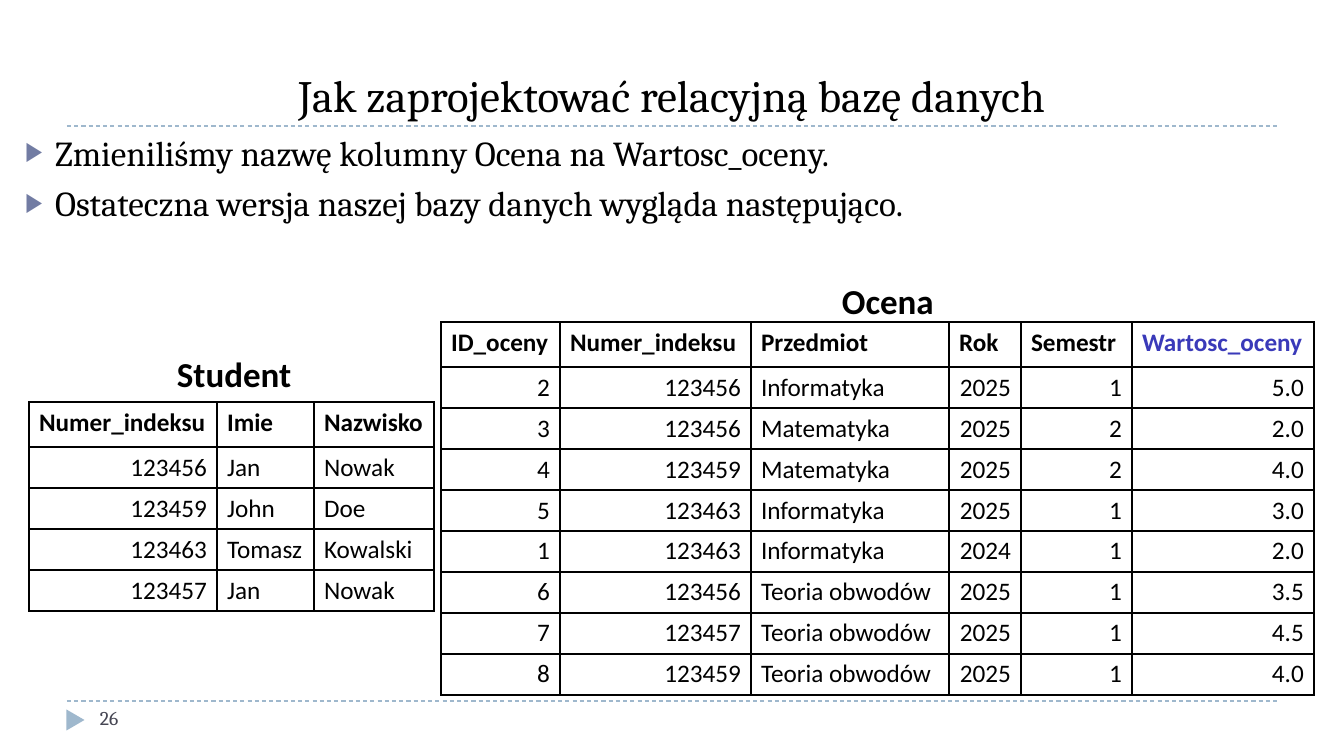
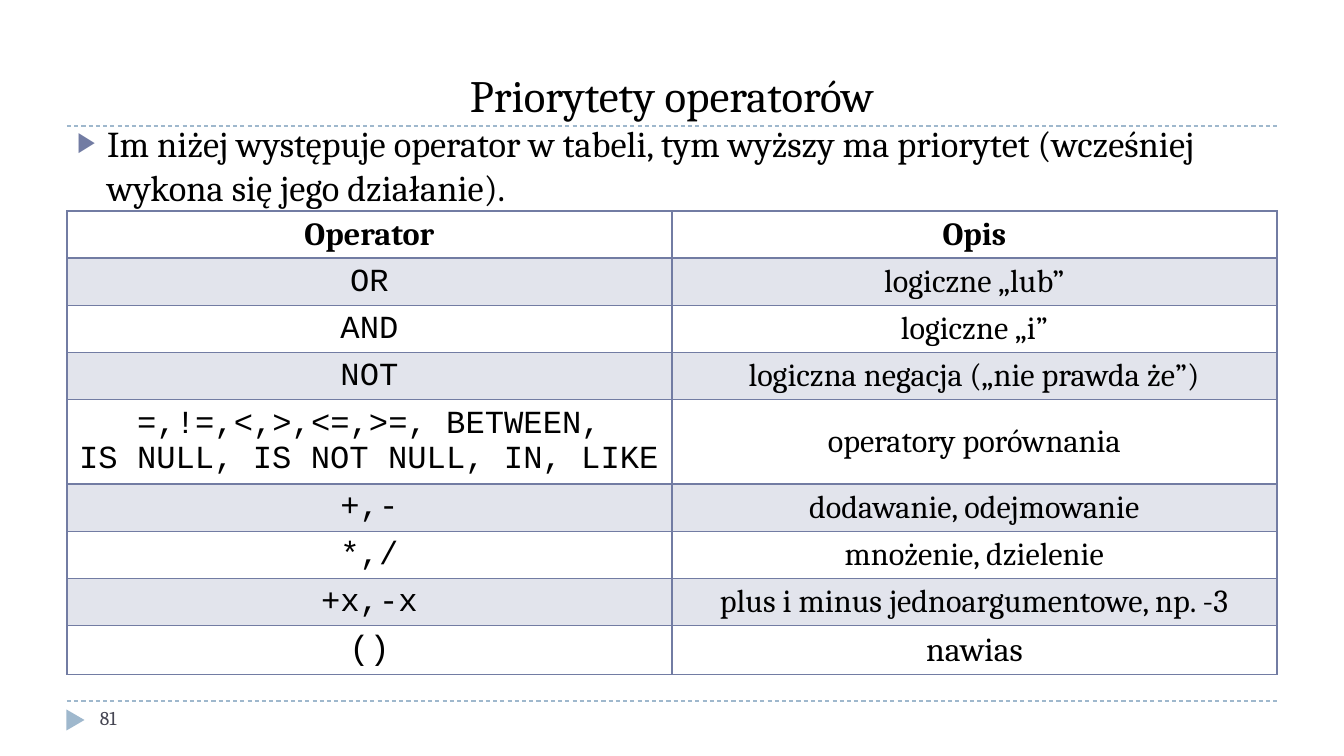
from dataclasses import dataclass

from lxml import etree
from pptx import Presentation
from pptx.dml.color import RGBColor
from pptx.enum.dml import MSO_LINE
from pptx.enum.shapes import MSO_CONNECTOR, MSO_SHAPE
from pptx.enum.text import MSO_ANCHOR, MSO_AUTO_SIZE, PP_ALIGN
from pptx.oxml.ns import qn
from pptx.util import Emu, Pt

WIDE, HIGH = 1344, 756
SCALE = 12192000 / WIDE

BLACK = RGBColor(0x00, 0x00, 0x00)
SKY = RGBColor(0x9F, 0xB8, 0xCD)
SLATE = RGBColor(0x72, 0x7C, 0xA3)
GREY = RGBColor(0x46, 0x46, 0x53)
BLUE = RGBColor(0x3A, 0x3A, 0xB9)

SERIF, SANS, MONO = "Cambria", "Calibri", "Courier New"

LEFT, CENTER, RIGHT = PP_ALIGN.LEFT, PP_ALIGN.CENTER, PP_ALIGN.RIGHT
TOP, MIDDLE, BOTTOM = MSO_ANCHOR.TOP, MSO_ANCHOR.MIDDLE, MSO_ANCHOR.BOTTOM
FIXED = MSO_AUTO_SIZE.NONE
STRAIGHT = MSO_CONNECTOR.STRAIGHT
WEDGE = MSO_SHAPE.ISOSCELES_TRIANGLE
DASH = MSO_LINE.DASH

EDGE, SPAN = 67, 1210
RULES = (126, 701)


@dataclass(frozen=True)
class Box:
    x: int
    y: int
    w: int
    h: int


@dataclass(frozen=True)
class Face:
    name: str
    size: int
    color: RGBColor = BLACK
    bold: bool = False


@dataclass(frozen=True)
class Grid:
    x: int
    y: int
    cols: tuple
    rows: tuple
    cells: tuple
    aligns: tuple
    head: Face
    faces: tuple
    line: RGBColor = BLACK
    rule: int = 1
    anchor: MSO_ANCHOR = TOP
    striped: bool = False
    pitch: float = 1.0


@dataclass(frozen=True)
class Label:
    text: str
    x: int
    y: int


def px(n: float) -> Emu:
    return Emu(round(n * SCALE))


def place(shape, box: Box) -> None:
    shape.left, shape.top = px(box.x), px(box.y)
    shape.width, shape.height = px(box.w), px(box.h)


def style(para, face: Face, align=LEFT) -> None:
    para.alignment = align
    font = para.font
    font.name, font.size, font.bold = face.name, Pt(face.size), face.bold
    font.color.rgb = face.color


def add_text(slide, box: Box, text: str, face: Face) -> None:
    area = slide.shapes.add_textbox(*map(px, (box.x, box.y, box.w, box.h)))
    frame = area.text_frame
    frame.word_wrap = True
    frame.text = text
    style(frame.paragraphs[0], face)


def add_bullet(para) -> None:
    props = para._p.get_or_add_pPr()
    props.set("marL", str(px(30)))
    props.set("indent", str(-px(30)))
    tint = etree.SubElement(props, qn("a:buClr"))
    etree.SubElement(tint, qn("a:srgbClr"), val=str(SLATE))
    etree.SubElement(props, qn("a:buSzPct"), val="76000")
    etree.SubElement(props, qn("a:buFont"), typeface=SERIF)
    etree.SubElement(props, qn("a:buChar"), char="▶")


def add_frame(slide, title: str, number: int) -> None:
    """Draw the title, dashed rules, marker and page number."""
    head = slide.shapes.title
    place(head, Box(EDGE, 18, SPAN, 109))
    frame = head.text_frame
    frame.text = title
    frame.vertical_anchor = BOTTOM
    frame.auto_size = FIXED
    style(frame.paragraphs[0], Face(SERIF, 32), CENTER)
    for y in RULES:
        rule = slide.shapes.add_connector(
            STRAIGHT, px(EDGE), px(y), px(EDGE + SPAN), px(y))
        rule.line.color.rgb = SKY
        rule.line.width = Pt(0.75)
        rule.line.dash_style = DASH
        etree.SubElement(rule._element.spPr, qn("a:effectLst"))
    mark = slide.shapes.add_shape(WEDGE, px(65), px(711), px(21), px(18))
    mark.rotation = 90
    mark.shadow.inherit = False
    mark.fill.solid()
    mark.fill.fore_color.rgb = SKY
    mark.line.fill.background()
    add_text(slide, Box(90, 701, 291, 40), str(number), Face(SERIF, 14, GREY))


def fill_body(slide, box: Box, lines: tuple, size: int) -> None:
    body = slide.placeholders[1]
    place(body, box)
    frame = body.text_frame
    frame.text = "\n".join(lines)
    frame.auto_size = FIXED
    frame.vertical_anchor = TOP
    for i, para in enumerate(frame.paragraphs):
        add_bullet(para)
        para.space_before = Pt(6 if i else 0)
        para.line_spacing = 1.0
        style(para, Face(SERIF, size))


def set_edges(cell, color: RGBColor, widths: dict) -> None:
    props = cell._tc.get_or_add_tcPr()
    for i, (side, width) in enumerate(widths.items()):
        edge = etree.Element(qn(f"a:ln{side}"), w=str(Pt(width)))
        paint = etree.SubElement(edge, qn("a:solidFill"))
        etree.SubElement(paint, qn("a:srgbClr"), val=str(color))
        props.insert(i, edge)


def set_fill(cell, shaded: bool) -> None:
    if not shaded:
        cell.fill.background()
        return
    cell.fill.solid()
    cell.fill.fore_color.rgb = SLATE
    tint = cell._tc.tcPr.find(f".//{qn('a:srgbClr')}")
    etree.SubElement(tint, qn("a:alpha"), val="20000")


def add_grid(slide, grid: Grid) -> None:
    table = slide.shapes.add_table(
        len(grid.rows), len(grid.cols), px(grid.x), px(grid.y),
        px(sum(grid.cols)), px(sum(grid.rows))).table
    table.first_row = table.horz_banding = False
    for col, width in zip(table.columns, grid.cols):
        col.width = px(width)
    for r, (row, height) in enumerate(zip(table.rows, grid.rows)):
        row.height = px(height)
        for c, text in enumerate(grid.cells[r]):
            cell = table.cell(r, c)
            cell.text = text
            cell.vertical_anchor = grid.anchor
            face = grid.faces[c] if r else grid.head
            if text == "Wartosc_oceny":
                face = Face(face.name, face.size, BLUE, True)
            elif text in ("()", "nawias"):
                face = Face(face.name, 24)
            align = grid.aligns[c]
            if r == 0 and align == RIGHT:
                align = LEFT
            para = cell.text_frame.paragraphs[0]
            para.line_spacing = grid.pitch
            style(para, face, align)
            set_fill(cell, grid.striped and r % 2 == 1)
            set_edges(cell, grid.line, {
                "L": 1, "R": 1,
                "T": grid.rule if r == 1 else 1,
                "B": grid.rule if r == 0 else 1})


def add_data(slide, x: int, y: int, cols: tuple, aligns: tuple,
             cells: tuple) -> None:
    """Add a database table in the plain black style."""
    rows = (45,) + (41,) * (len(cells) - 1)
    add_grid(slide, Grid(x, y, cols, rows, cells, aligns,
                         Face(SANS, 18, bold=True),
                         (Face(SANS, 18),) * len(cols)))


GRADES = (
    ("ID_oceny", "Numer_indeksu", "Przedmiot", "Rok", "Semestr",
     "Wartosc_oceny"),
    ("2", "123456", "Informatyka", "2025", "1", "5.0"),
    ("3", "123456", "Matematyka", "2025", "2", "2.0"),
    ("4", "123459", "Matematyka", "2025", "2", "4.0"),
    ("5", "123463", "Informatyka", "2025", "1", "3.0"),
    ("1", "123463", "Informatyka", "2024", "1", "2.0"),
    ("6", "123456", "Teoria obwodów", "2025", "1", "3.5"),
    ("7", "123457", "Teoria obwodów", "2025", "1", "4.5"),
    ("8", "123459", "Teoria obwodów", "2025", "1", "4.0"),
)
PUPILS = (
    ("Numer_indeksu", "Imie", "Nazwisko"),
    ("123456", "Jan", "Nowak"),
    ("123459", "John", "Doe"),
    ("123463", "Tomasz", "Kowalski"),
    ("123457", "Jan", "Nowak"),
)
SIGNS = (
    ("Operator", "Opis"),
    ("OR", "logiczne „lub”"),
    ("AND", "logiczne „i”"),
    ("NOT", "logiczna negacja („nie prawda że”)"),
    ("=,!=,<,>,<=,>=, BETWEEN,\vIS NULL, IS NOT NULL, IN, LIKE",
     "operatory porównania"),
    ("+,-", "dodawanie, odejmowanie"),
    ("*,/", "mnożenie, dzielenie"),
    ("+x,-x", "plus i minus jednoargumentowe, np. -3"),
    ("()", "nawias"),
)
LABELS = (Label("Student", 167, 348), Label("Ocena", 832, 275))


def draw_design(slide) -> None:
    add_frame(slide, "Jak zaprojektować relacyjną bazę danych", 26)
    fill_body(slide, Box(15, 126, 1299, 180), (
        "Zmieniliśmy nazwę kolumny Ocena na Wartosc_oceny.",
        "Ostateczna wersja naszej bazy danych wygląda następująco."), 25)
    add_data(slide, 441, 322, (119, 191, 198, 72, 111, 182),
             (RIGHT, RIGHT, LEFT, RIGHT, RIGHT, RIGHT), GRADES)
    add_data(slide, 29, 402, (188, 97, 120), (RIGHT, LEFT, LEFT), PUPILS)
    for label in LABELS:
        add_text(slide, Box(label.x, label.y, 143, 54), label.text,
                 Face(SANS, 25, bold=True))


def draw_ranks(slide) -> None:
    add_frame(slide, "Priorytety operatorów", 81)
    fill_body(slide, Box(EDGE, 116, SPAN, 103), (
        "Im niżej występuje operator w tabeli, tym wyższy ma priorytet "
        "(wcześniej wykona się jego działanie).",), 26)
    rows = (47,) * 4 + (83,) + (47,) * 3 + (49,)
    add_grid(slide, Grid(EDGE, 211, (SPAN // 2,) * 2, rows, SIGNS,
                         (CENTER, CENTER), Face(SERIF, 23, bold=True),
                         (Face(MONO, 23), Face(SERIF, 23)),
                         SLATE, 2, MIDDLE, True, 0.96))


def main() -> None:
    deck = Presentation()
    deck.slide_width, deck.slide_height = px(WIDE), px(HIGH)
    for draw in (draw_design, draw_ranks):
        draw(deck.slides.add_slide(deck.slide_layouts[1]))
    deck.save("out.pptx")


if __name__ == "__main__":
    main()
